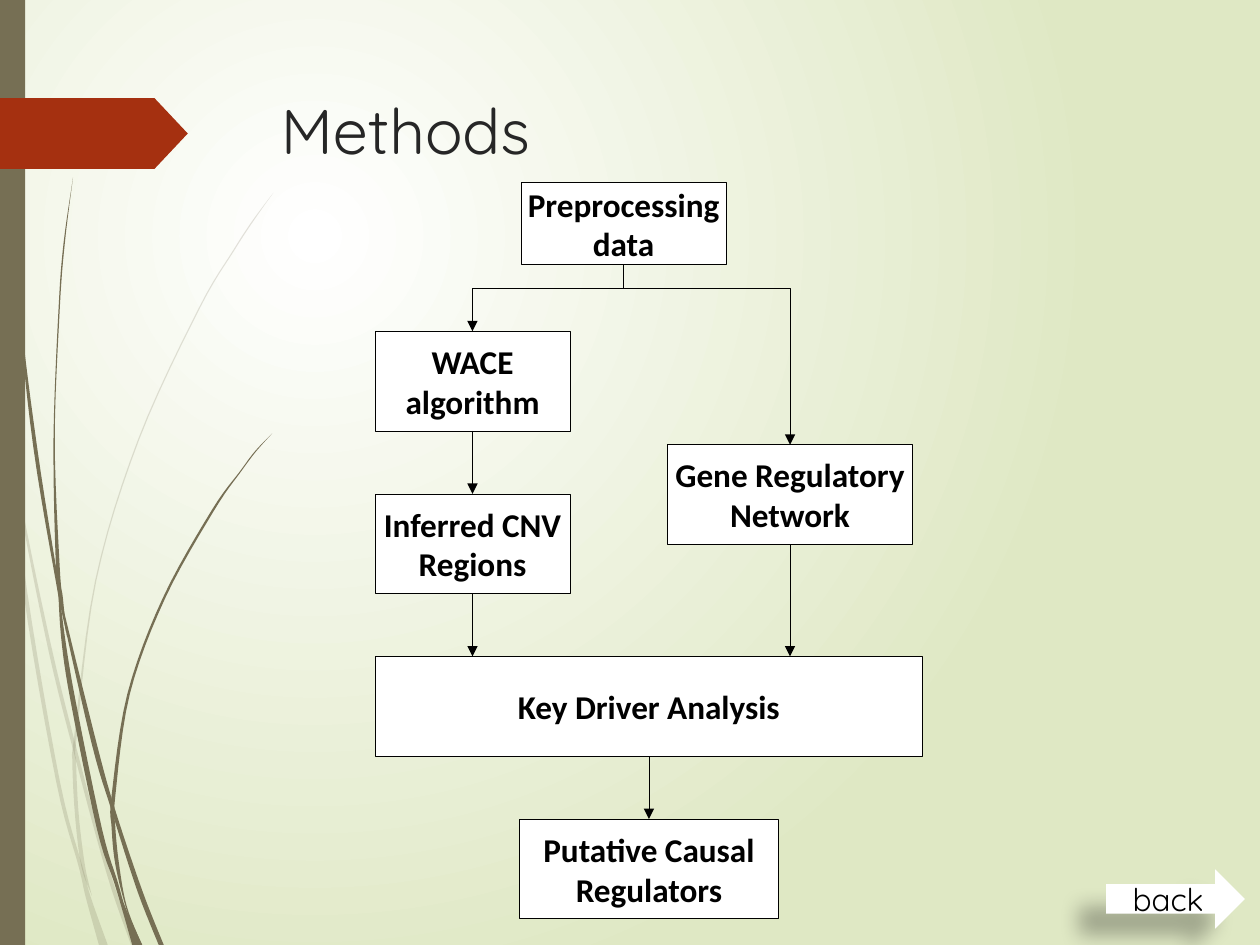
"""Build the Methods slide: a flow chart from preprocessing to causal regulators."""
from lxml.etree import SubElement
from pptx import Presentation
from pptx.dml.color import RGBColor
from pptx.enum.shapes import MSO_CONNECTOR, MSO_SHAPE
from pptx.enum.text import MSO_ANCHOR, PP_ALIGN
from pptx.oxml.ns import qn
from pptx.util import Inches, Pt

WHITE = RGBColor(0xFF, 0xFF, 0xFF)
BLACK = RGBColor(0x00, 0x00, 0x00)
CHARCOAL = RGBColor(0x26, 0x26, 0x26)
PALE_GREEN = RGBColor(0xDF, 0xE8, 0xC4)
OLIVE = RGBColor(0x76, 0x6F, 0x54)
RUST = RGBColor(0xA5, 0x30, 0x10)


def add_block(preset, left, top, width, height, color):
    block = slide.shapes.add_shape(
        preset, Inches(left), Inches(top), Inches(width), Inches(height))
    block.shadow.inherit = False
    block.fill.solid()
    block.fill.fore_color.rgb = color
    block.line.fill.background()
    return block


def write_lines(box, lines, font_name, size, color, align, bold=False):
    for number, line in enumerate(lines):
        frame = box.text_frame
        para = frame.add_paragraph() if number else frame.paragraphs[0]
        para.text = line
        para.alignment = align
        para.font.name = font_name
        para.font.size = Pt(size)
        para.font.bold = bold
        para.font.color.rgb = color


deck = Presentation()
deck.slide_width, deck.slide_height = Inches(10), Inches(7.5)
slide = deck.slides.add_slide(deck.slide_layouts[6])

backdrop = slide.background.fill
backdrop.gradient()
for stop, color in zip(backdrop.gradient_stops, (WHITE, PALE_GREEN)):
    stop.color.rgb = color
gradient = next(slide.element.iter(qn("a:gradFill")))
gradient.remove(gradient.find(qn("a:lin")))
circle = SubElement(gradient, qn("a:path"), {"path": "circle"})
SubElement(circle, qn("a:fillToRect"), l="50000", t="50000", r="100000", b="100000")

# Each strand: opacity in percent, then centre points as (x, y, width).
strands = [
    (20, [(0, 2.9, 0.02), (0.07, 3.47, 0.01), (0.21, 4.25, 0.02), (0.41, 5.21, 0.03),
          (0.6, 5.97, 0.03), (0.86, 6.93, 0.03), (1.06, 7.5, 0.04)]),
    (20, [(0.08, 3.5, 0), (0.2, 4.69, 0.03), (0.46, 6.2, 0.03), (0.64, 6.88, 0.03),
          (0.7, 7.12, 0.04), (0.82, 7.5, 0.07)]),
    (20, [(2.17, 1.53, 0), (2.01, 1.75, 0.01), (1.86, 1.98, 0.01), (1.58, 2.45, 0.01),
          (1.1, 3.49, 0.01), (0.76, 4.61, 0.01), (0.6, 5.84, 0.02), (0.59, 6.05, 0.03),
          (0.61, 6.46, 0.03), (0.66, 6.87, 0.03), (0.73, 7.11, 0)]),
    (100, [(0.02, 0, 0.01), (0.05, 1.1, 0.01), (0.14, 2.33, 0.01), (0.28, 3.55, 0.03),
           (0.46, 4.65, 0.02), (0.51, 4.9, 0.02), (0.75, 5.91, 0.04),
           (0.9, 6.43, 0.03), (1.11, 7.07, 0.04), (1.28, 7.5, 0.04)]),
    (100, [(0.46, 4.6, 0), (0.5, 5.05, 0.03), (0.58, 5.56, 0.04), (0.79, 6.58, 0.04),
           (0.92, 7, 0.03), (0.98, 7.2, 0.03), (1.09, 7.5, 0.08)]),
    (100, [(0.58, 1.41, 0), (0.51, 1.93, 0.01), (0.47, 2.45, 0.01), (0.43, 3.49, 0.01),
           (0.46, 4.51, 0.03), (0.49, 4.75, 0.02), (0.53, 5.05, 0)]),
    (100, [(2.16, 3.44, 0), (2.03, 3.58, 0.01), (1.91, 3.74, 0.01), (1.69, 4.05, 0.02),
           (1.3, 4.75, 0.02), (1.02, 5.51, 0.02), (0.9, 6.32, 0.03),
           (0.9, 6.56, 0.03), (0.93, 6.86, 0.03), (1, 7.19, 0.01), (1.11, 7.5, 0.03)]),
]
STEPS = 6
for opacity, points in strands:
    padded = [points[0], *points, points[-1]]
    spine = []
    for before, start, end, after in zip(padded, padded[1:], padded[2:], padded[3:]):
        for step in range(STEPS):
            t = step / STEPS
            spine.append([
                b + (c - a) * t / 2 + (2 * a - 5 * b + 4 * c - d) * t ** 2 / 2
                + (3 * b - a - 3 * c + d) * t ** 3 / 2
                for a, b, c, d in zip(before, start, end, after)])
    spine.append(points[-1])
    left_edge = [(Inches(x - w / 2), Inches(y)) for x, y, w in spine]
    right_edge = [(Inches(x + w / 2), Inches(y)) for x, y, w in spine]
    builder = slide.shapes.build_freeform(*left_edge[0])
    builder.add_line_segments(left_edge[1:] + right_edge[::-1], close=True)
    strand = builder.convert_to_shape()
    strand.shadow.inherit = False
    strand.fill.solid()
    strand.fill.fore_color.rgb = OLIVE
    strand.line.fill.background()
    tint = strand.element.spPr.find(qn("a:solidFill"))[0]
    SubElement(tint, qn("a:alpha"), val=str(opacity * 1000))

add_block(MSO_SHAPE.RECTANGLE, 0, 0, 0.2, 7.5, OLIVE)
tag = add_block(MSO_SHAPE.PENTAGON, 0, 0.78, 1.49, 0.56, RUST)
tag.adjustments[0] = 0.47

title = slide.shapes.add_textbox(Inches(2.13), Inches(0.68), Inches(7.21), Inches(1.4))
title.text_frame.word_wrap = True
write_lines(title, ["Methods"], "Quicksand", 36, CHARCOAL, PP_ALIGN.LEFT)

LEFT_AXIS, START_AXIS, MIDDLE_AXIS, RIGHT_AXIS = 3.75, 4.95, 5.15, 6.27
BOX_HEIGHT = 0.79
START_TOP, START_HEIGHT = 1.45, 0.65
START_BOTTOM = START_TOP + START_HEIGHT
FORK = 2.29
wace_top, inferred_top, driver_top, causal_top = [2.63 + 1.29 * row for row in range(4)]
gene_top = 3.53

boxes = [
    (START_AXIS, START_TOP, 1.63, START_HEIGHT, ["Preprocessing", "data"]),
    (LEFT_AXIS, wace_top, 1.55, BOX_HEIGHT, ["WACE", "algorithm"]),
    (RIGHT_AXIS, gene_top, 1.95, BOX_HEIGHT, ["Gene Regulatory", "Network"]),
    (LEFT_AXIS, inferred_top, 1.55, BOX_HEIGHT, ["Inferred CNV", "Regions"]),
    (MIDDLE_AXIS, driver_top, 4.34, BOX_HEIGHT, ["Key Driver Analysis"]),
    (MIDDLE_AXIS, causal_top, 2.05, BOX_HEIGHT, ["Putative Causal", "Regulators"]),
]
for axis, top, width, height, lines in boxes:
    box = add_block(MSO_SHAPE.RECTANGLE, axis - width / 2, top, width, height, WHITE)
    box.line.color.rgb = BLACK
    box.line.width = Pt(0.38)
    frame = box.text_frame
    frame.margin_left = frame.margin_right = frame.margin_top = frame.margin_bottom = 0
    frame.word_wrap = False
    frame.vertical_anchor = MSO_ANCHOR.MIDDLE
    write_lines(box, lines, "Calibri", 19, BLACK, PP_ALIGN.CENTER, bold=True)

arrows = []
for axis, top in ((LEFT_AXIS, wace_top), (RIGHT_AXIS, gene_top)):
    route = [(START_AXIS, START_BOTTOM), (START_AXIS, FORK), (axis, FORK), (axis, top)]
    corners = [(Inches(x), Inches(y)) for x, y in route]
    builder = slide.shapes.build_freeform(*corners[0])
    builder.add_line_segments(corners[1:], close=False)
    elbow = builder.convert_to_shape()
    elbow.fill.background()
    arrows.append(elbow)
for axis, upper, lower in (
        (LEFT_AXIS, wace_top, inferred_top), (LEFT_AXIS, inferred_top, driver_top),
        (RIGHT_AXIS, gene_top, driver_top), (MIDDLE_AXIS, driver_top, causal_top)):
    arrows.append(slide.shapes.add_connector(
        MSO_CONNECTOR.STRAIGHT, Inches(axis), Inches(upper + BOX_HEIGHT),
        Inches(axis), Inches(lower)))
for arrow in arrows:
    arrow.line.color.rgb = BLACK
    arrow.line.width = Pt(0.38)
    properties = arrow.element.spPr
    SubElement(properties.find(qn("a:ln")), qn("a:tailEnd"), type="triangle")
    SubElement(properties, qn("a:effectLst"))

back = add_block(MSO_SHAPE.RIGHT_ARROW, 8.78, 6.9, 1.1, 0.47, WHITE)
back.text_frame.vertical_anchor = MSO_ANCHOR.MIDDLE
write_lines(back, ["back"], "Quicksand", 18, BLACK, PP_ALIGN.CENTER)
shadow = SubElement(
    back.element.spPr.find(qn("a:effectLst")), qn("a:outerShdw"),
    blurRad=str(Pt(11.8)), dist=str(Pt(19.7)), dir=str(141 * 60000), rotWithShape="0")
shade = SubElement(shadow, qn("a:srgbClr"), val=str(BLACK))
SubElement(shade, qn("a:alpha"), val="28000")

deck.save("out.pptx")
